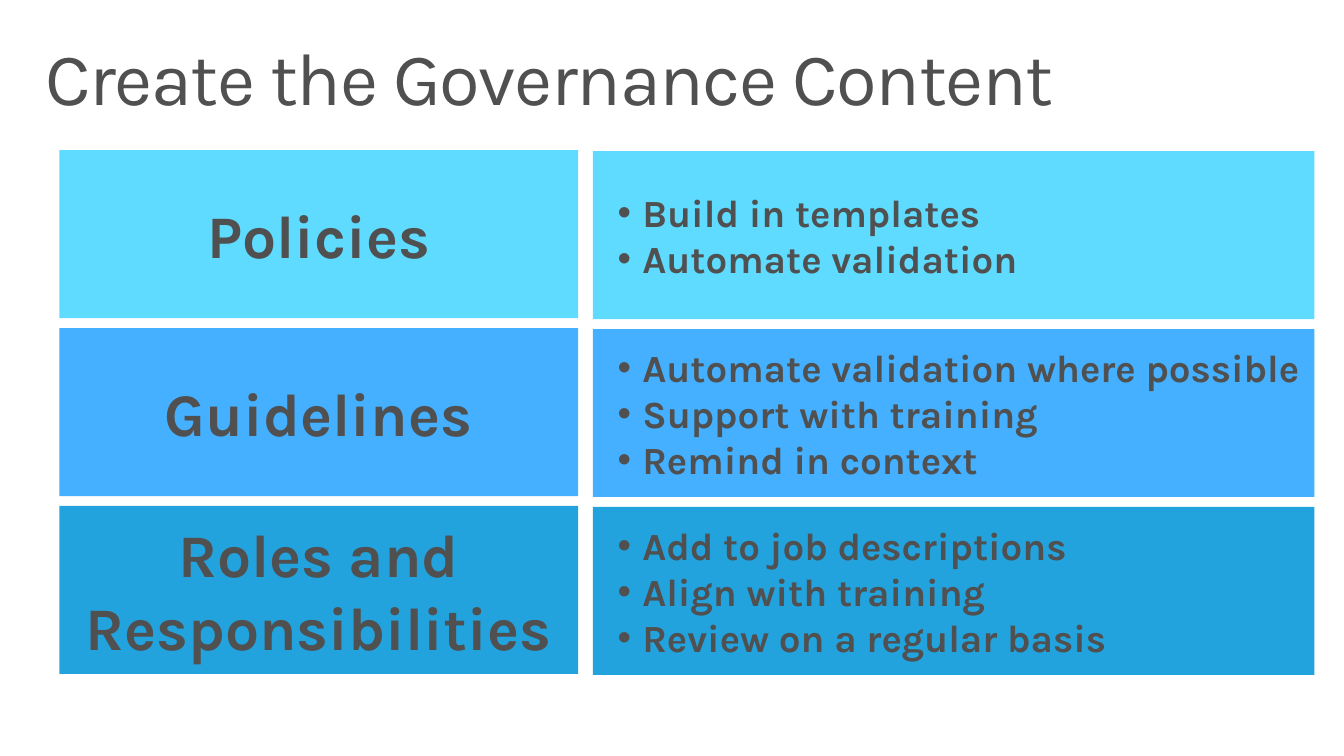
from lxml.etree import SubElement
from pptx import Presentation
from pptx.dml.color import RGBColor
from pptx.enum.shapes import MSO_SHAPE
from pptx.enum.text import MSO_ANCHOR, PP_ALIGN
from pptx.oxml.ns import qn
from pptx.util import Inches, Pt

FONT = "Karla"
TEXT_COLOR = RGBColor(0x50, 0x50, 0x50)
AQUA = RGBColor(0x5E, 0xDB, 0xFF)
SKY = RGBColor(0x44, 0xB0, 0xFF)
OCEAN = RGBColor(0x23, 0xA3, 0xDE)

TOPICS = [
    ("Policies", AQUA, ["Build in templates", "Automate validation"]),
    ("Guidelines", SKY, ["Automate validation where possible",
                         "Support with training", "Remind in context"]),
    ("Roles and Responsibilities", OCEAN, ["Add to job descriptions",
                                           "Align with training",
                                           "Review on a regular basis"]),
]
ROW_HEIGHT = 1.7
ROW_PITCH = 1.8
LABEL_WIDTH = 5.25
ACTIONS_OFFSET = 5.4


def style_font(paragraph, size, bold):
    font = paragraph.font
    font.name = FONT
    font.size = Pt(size)
    font.bold = bold
    font.color.rgb = TEXT_COLOR


def add_bullet(paragraph):
    properties = paragraph._p.get_or_add_pPr()
    properties.set("marL", str(Inches(0.5)))
    properties.set("indent", str(Inches(-0.25)))
    SubElement(properties, qn("a:buFont")).set("typeface", "Arial")
    SubElement(properties, qn("a:buChar")).set("char", "•")


def add_title(slide, left, top, width, height, text):
    box = slide.shapes.add_textbox(Inches(left), Inches(top), Inches(width), Inches(height))
    frame = box.text_frame
    frame.word_wrap = True
    frame.margin_left = frame.margin_right = Inches(0.16)
    frame.margin_top = frame.margin_bottom = Inches(0.1)
    paragraph = frame.paragraphs[0]
    paragraph.line_spacing = 0.9
    run = paragraph.add_run()
    run.text = text
    run._r.get_or_add_rPr().set("spc", "-100")
    style_font(paragraph, 54, False)


def add_panel(slide, left, top, width, color, lines, size, bulleted):
    panel = slide.shapes.add_shape(MSO_SHAPE.RECTANGLE, Inches(left), Inches(top),
                                   Inches(width), Inches(ROW_HEIGHT))
    panel.shadow.inherit = False
    panel.fill.solid()
    panel.fill.fore_color.rgb = color
    panel.line.fill.background()
    frame = panel.text_frame
    frame.word_wrap = True
    frame.vertical_anchor = MSO_ANCHOR.MIDDLE
    frame.margin_left = frame.margin_right = 0
    frame.margin_top = frame.margin_bottom = Inches(0.05)
    for index, line in enumerate(lines):
        paragraph = frame.add_paragraph() if index else frame.paragraphs[0]
        paragraph.text = line
        paragraph.alignment = PP_ALIGN.LEFT if bulleted else PP_ALIGN.CENTER
        if bulleted:
            add_bullet(paragraph)
        style_font(paragraph, size, True)


def add_topic_rows(slide, left, top, width):
    """Stack one row per topic: its label, then its actions."""
    for row, (label, color, actions) in enumerate(TOPICS):
        row_top = top + row * ROW_PITCH
        add_panel(slide, left, row_top, LABEL_WIDTH, color, [label], 44, False)
        add_panel(slide, left + ACTIONS_OFFSET, row_top + 0.01,
                  width - ACTIONS_OFFSET, color, actions, 28, True)


def main():
    presentation = Presentation()
    presentation.slide_width = Inches(13.6)
    presentation.slide_height = Inches(7.65)
    slide = presentation.slides.add_slide(presentation.slide_layouts[6])
    add_title(slide, 0.3, 0.32, 13, 1, "Create the Governance Content")
    add_topic_rows(slide, 0.6, 1.52, 12.7)
    presentation.save("out.pptx")


if __name__ == "__main__":
    main()
